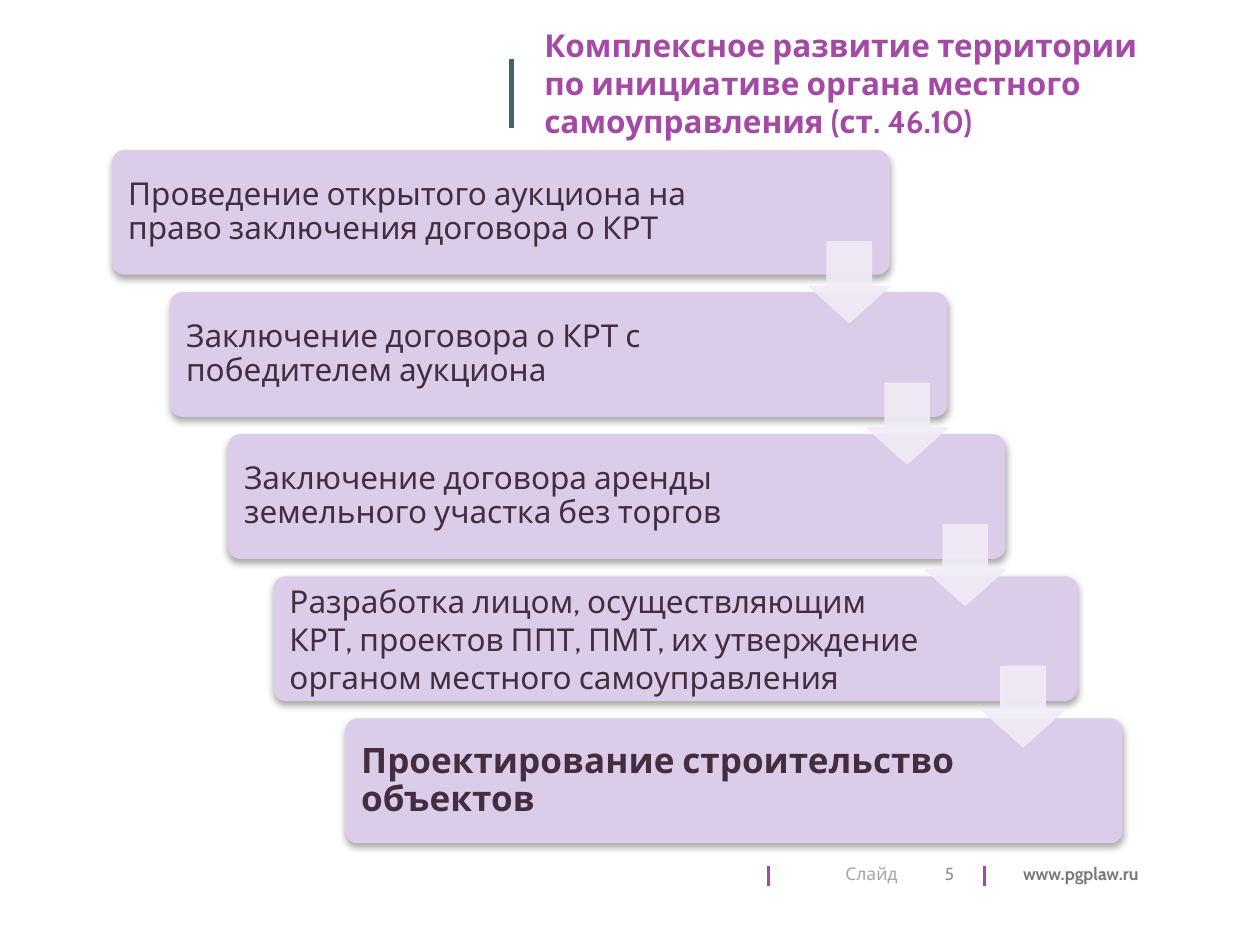
from lxml.etree import SubElement
from pptx import Presentation
from pptx.dml.color import RGBColor
from pptx.enum.shapes import MSO_CONNECTOR, MSO_SHAPE
from pptx.enum.text import MSO_ANCHOR, MSO_AUTO_SIZE, PP_ALIGN
from pptx.oxml.ns import qn
from pptx.util import Inches, Pt

THEME = {
    "font": "Cabin", "title": 18, "step": 18, "final": 20, "footer": 10,
    "accent": "A44AA6", "rule": "486364", "box": "DBCCEA", "ink": "432D3F",
    "arrow": "F1ECF7", "label": "A6A6A6", "site": "797979", "number": "948F93",
}

prs = Presentation()
prs.slide_width, prs.slide_height = Inches(10), Inches(7.5)
cell = prs.slide_width / 100
s = prs.slides.add_slide(prs.slide_layouts[5])


def grid(*cells):
    return [round(n * cell) for n in cells]


def write(p, text, size, color, bold=False):
    r = p.add_run()
    r.text = text
    r.font.name = THEME["font"]
    r.font.size = Pt(THEME[size])
    r.font.bold = bold
    r.font.color.rgb = RGBColor.from_string(THEME[color])


footer = s.shapes.add_textbox(*grid(62.5, 68, 28.9, 2.7))
tf = footer.text_frame
tf.word_wrap = True
tf.margin_left = grid(4.6)[0]
p = tf.paragraphs[0]
tabs = SubElement(p._p.get_or_add_pPr(), qn("a:tabLst"))
SubElement(tabs, qn("a:tab"), pos=str(grid(14.1)[0]), algn="l")
write(p, "Слайд\t", "footer", "label")
write(p, "www.pgplaw.ru", "footer", "site", True)

for x, top, bottom, color, width in [
    (40.6, 4.7, 10.2, "rule", 2.5),
    (78.1, 68.7, 70.3, "accent", 1.75),
    (61, 68.7, 70.3, "accent", 1.75),
]:
    rule = s.shapes.add_connector(MSO_CONNECTOR.STRAIGHT, *grid(x, top, x, bottom))
    rule.line.color.rgb = RGBColor.from_string(THEME[color])
    rule.line.width = Pt(width)
    SubElement(rule._element.spPr, qn("a:effectLst"))

steps = [
    ("Проведение открытого аукциона на право заключения договора о КРТ", 8.9, 61.7, 0.9),
    ("Заключение договора о КРТ с победителем аукциона", 13.5, 61.7, 0.9),
    ("Заключение договора аренды земельного участка без торгов", 18.1, 61.7, 0.9),
    ("Разработка лицом, осуществляющим КРТ, проектов ППТ, ПМТ, их утверждение "
     "органом местного самоуправления", 21.7, 63.8, 1.0),
    ("Проектирование строительство объектов", 27.4, 61.7, 0.9),
]
for i, (text, left, width, spacing) in enumerate(steps):
    final = i == len(steps) - 1
    sp = s.shapes.add_shape(MSO_SHAPE.ROUNDED_RECTANGLE,
                            *grid(left, 11.9 + 11.28 * i, width, 9.9))
    sp.adjustments[0] = 0.1
    sp.fill.solid()
    sp.fill.fore_color.rgb = RGBColor.from_string(THEME["box"])
    sp.line.fill.background()
    sp.shadow.inherit = False
    shadow = SubElement(sp._element.spPr.find(qn("a:effectLst")), qn("a:outerShdw"),
                        blurRad=str(Pt(4)), dist=str(Pt(2)), dir="5400000", rotWithShape="0")
    black = SubElement(shadow, qn("a:srgbClr"), val="000000")
    SubElement(black, qn("a:alpha"), val="35000")
    tf = sp.text_frame
    tf.word_wrap = True
    tf.vertical_anchor = MSO_ANCHOR.MIDDLE
    tf.margin_left, tf.margin_right, tf.margin_top, tf.margin_bottom = grid(1, 12, 0.4, 0.4)
    p = tf.paragraphs[0]
    p.alignment = PP_ALIGN.LEFT
    p.line_spacing = spacing
    write(p, text, "final" if final else "step", "ink", final)

for i in range(len(steps) - 1):
    arrow = s.shapes.add_shape(MSO_SHAPE.DOWN_ARROW,
                               *grid(64.2 + 4.6 * i, 19.2 + 11.23 * i, 6.4, 6.4))
    arrow.adjustments[0], arrow.adjustments[1] = 0.55, 0.45
    arrow.shadow.inherit = False
    arrow.fill.solid()
    arrow.line.fill.solid()
    arrow.line.width = Pt(0.75)
    for color in (arrow.fill.fore_color, arrow.line.color):
        color.rgb = RGBColor.from_string(THEME["arrow"])
    for tint in arrow._element.spPr.iter(qn("a:srgbClr")):
        SubElement(tint, qn("a:alpha"), val="90000")

title = s.shapes.title
title.left, title.top, title.width, title.height = grid(42.2, 1.6, 51.7, 9.3)
tf = title.text_frame
tf.word_wrap = True
tf.auto_size = MSO_AUTO_SIZE.NONE
tf.vertical_anchor = MSO_ANCHOR.TOP
p = tf.paragraphs[0]
p.alignment = PP_ALIGN.LEFT
write(p, "Комплексное развитие территории", "title", "accent", True)
p.add_line_break()
write(p, "по инициативе органа местного самоуправления (ст. 46.10)", "title", "accent", True)

number = s.shapes.add_textbox(*grid(64.2, 67.8, 12.5, 3.1))
tf = number.text_frame
tf.word_wrap = True
tf.vertical_anchor = MSO_ANCHOR.MIDDLE
p = tf.paragraphs[0]
p.alignment = PP_ALIGN.RIGHT
write(p, "5", "footer", "number")

prs.save("out.pptx")
